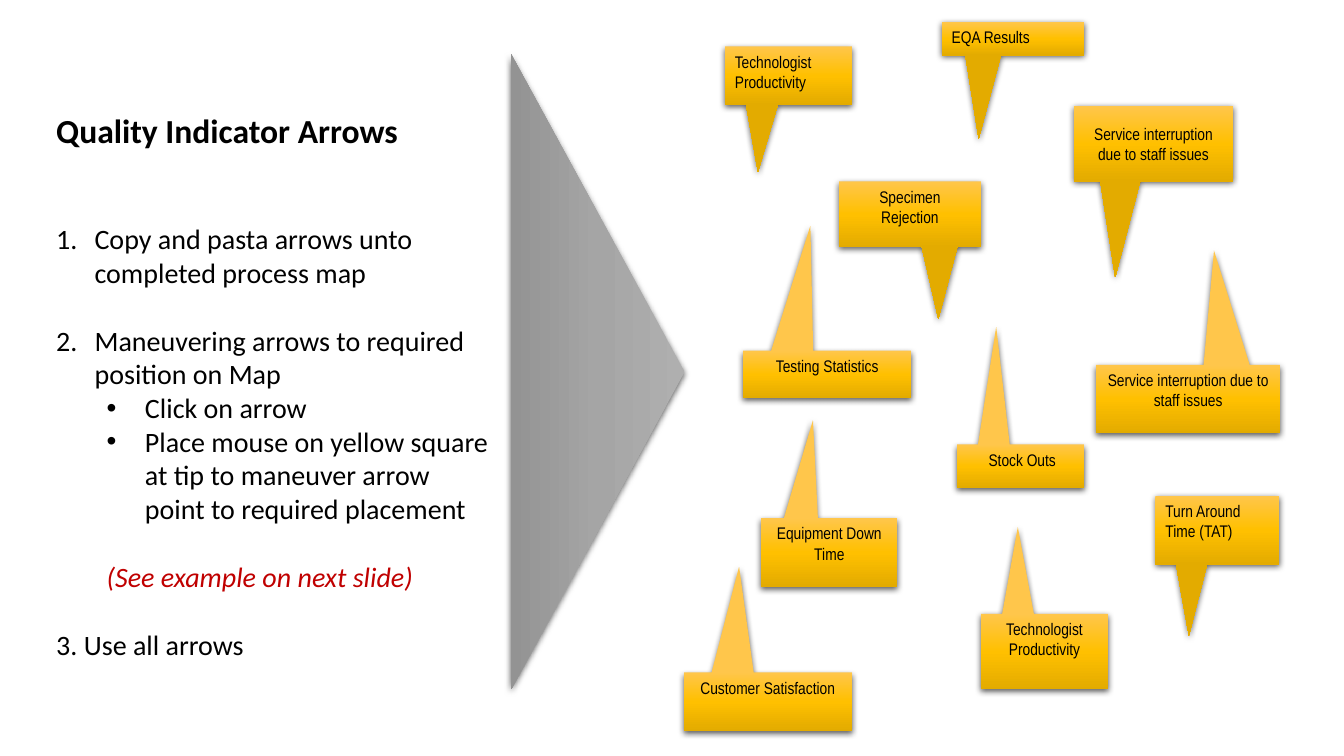
import pptx
import pptx.dml.color
import pptx.enum.shapes
import pptx.enum.text
import pptx.oxml
import pptx.oxml.ns
import pptx.util

SHAPES = pptx.enum.shapes.MSO_SHAPE
ALIGN = pptx.enum.text.PP_ALIGN
ANCHOR = pptx.enum.text.MSO_ANCHOR
NAMESPACE = pptx.oxml.ns.nsdecls("a")
BLACK = "000000"
YELLOWS = ("FFC64B", "FFC000", "E3AB00")
GREYS = ("AFAFAF", "A5A5A5", "939393")


def colour(value):
    return pptx.dml.color.RGBColor.from_string(value)


class IndicatorSlide:
    unit = 0.1
    body_font = "Calibri"
    callout_font = "Arial Narrow"

    def __init__(self, deck):
        self.slide = deck.slides.add_slide(deck.slide_layouts[6])

    def cells(self, *counts):
        return [pptx.util.Inches(count * self.unit) for count in counts]

    def format_runs(self, paragraph, font, size, text_colour, bold=False, italic=False):
        for run in paragraph.runs:
            run.font.name = font
            run.font.size = pptx.util.Pt(size)
            run.font.color.rgb = colour(text_colour)
            run.font.bold = bold
            run.font.italic = italic

    def raised_shape(self, kind, place, shades):
        shape = self.slide.shapes.add_shape(kind, *self.cells(*place))
        shape.line.fill.background()
        shape.shadow.inherit = False
        stops = "".join(
            f'<a:gs pos="{50000 * step}"><a:srgbClr val="{shade}"/></a:gs>'
            for step, shade in enumerate(shades)
        )
        gradient = pptx.oxml.parse_xml(
            f'<a:gradFill {NAMESPACE} rotWithShape="1"><a:gsLst>{stops}</a:gsLst>'
            '<a:lin ang="5400000" scaled="0"/></a:gradFill>'
        )
        shadow = pptx.oxml.parse_xml(
            f'<a:outerShdw {NAMESPACE} blurRad="57150" dist="19050" dir="5400000" '
            'algn="ctr" rotWithShape="0"><a:srgbClr val="000000">'
            '<a:alpha val="63000"/></a:srgbClr></a:outerShdw>'
        )
        properties = shape.element.spPr
        properties.find(pptx.oxml.ns.qn("a:ln")).addprevious(gradient)
        properties.find(pptx.oxml.ns.qn("a:effectLst")).append(shadow)
        return shape

    def callout(self, label, place, tip, align=ALIGN.CENTER, anchor=ANCHOR.TOP):
        box = self.raised_shape(SHAPES.RECTANGULAR_CALLOUT, place, YELLOWS)
        box.adjustments[0], box.adjustments[1] = tip
        frame = box.text_frame
        frame.word_wrap = True
        frame.vertical_anchor = anchor
        frame.text = label
        for paragraph in frame.paragraphs:
            paragraph.alignment = align
            self.format_runs(paragraph, self.callout_font, 12, BLACK)

    def big_arrow(self, place):
        arrow = self.raised_shape(SHAPES.ISOSCELES_TRIANGLE, place, GREYS)
        arrow.rotation = 90

    def text_column(self, place):
        frame = self.slide.shapes.add_textbox(*self.cells(*place)).text_frame
        frame.word_wrap = True
        return frame

    def set_marker(self, paragraph, margin, hanging, marker):
        properties = paragraph._p.get_or_add_pPr()
        properties.set("marL", str(pptx.util.Inches(margin)))
        properties.set("indent", str(pptx.util.Inches(-hanging)))
        bullets = {
            "number": ("buFont", 'typeface="+mj-lt"', "buAutoNum", 'type="arabicPeriod"'),
            "dot": ("buFont", 'typeface="Arial"', "buChar", 'char="•"'),
        }
        if marker in bullets:
            font_tag, face, tag, setting = bullets[marker]
            for name, attribute in ((font_tag, face), (tag, setting)):
                properties.append(pptx.oxml.parse_xml(f"<a:{name} {NAMESPACE} {attribute}/>"))

    def instruction(self, paragraph, text, gap=0, level=0, margin=0, hanging=0,
                    marker=None, size=20, text_colour=BLACK, bold=False, italic=False):
        paragraph.text = text
        paragraph.level = level
        paragraph.space_before = pptx.util.Pt(gap)
        self.set_marker(paragraph, margin, hanging, marker)
        self.format_runs(paragraph, self.body_font, size, text_colour, bold, italic)


CALLOUTS = [
    ("Equipment Down Time", (75.5, 51.4, 13.5, 6.8), (-0.12, -1.93)),
    (" Stock Outs", (94.9, 44.1, 12.6, 4.3), (-0.19, -3.22)),
    ("Technologist Productivity", (97.3, 60.9, 12.6, 7.5), (-0.21, -1.65)),
    ("Service interruption due to staff issues", (106.5, 10.5, 15.8, 7.5),
     (-0.24, 1.77), ALIGN.CENTER, ANCHOR.MIDDLE),
    ("Specimen Rejection", (83.2, 18, 14.1, 6.5), (0.2, 1.6)),
    ("EQA Results", (93.4, 2.2, 14.1, 3.3), (-0.24, 3.01), ALIGN.LEFT),
    ("Technologist\nProductivity", (71.9, 4.6, 12.6, 5.8), (-0.24, 1.65), ALIGN.LEFT),
    ("Turn Around Time (TAT)", (114.6, 49.2, 12.3, 6.8), (-0.23, 1.54), ALIGN.LEFT),
    ("Service interruption due to staff issues", (108.7, 36.2, 18.3, 6.8), (0.14, -2.17)),
    ("Customer Satisfaction", (67.8, 66.7, 16.7, 5.8), (-0.17, -2.31)),
    ("Testing Statistics", (73.7, 34.8, 16.7, 4.7), (-0.1, -3.14)),
]

LINE = 24.4
NUMBERED = dict(margin=0.38, hanging=0.38, marker="number")
DOTTED = dict(level=1, margin=0.88, hanging=0.38, marker="dot")
INSTRUCTIONS = [
    ("Quality Indicator Arrows", dict(size=24, bold=True)),
    ("Copy and pasta arrows unto completed process map", dict(gap=51.3, **NUMBERED)),
    ("Maneuvering arrows to required position on Map", dict(gap=LINE, **NUMBERED)),
    ("Click on arrow", DOTTED),
    ("Place mouse on yellow square at tip to maneuver arrow point to required placement",
     DOTTED),
    ("(See example on next slide)",
     dict(gap=LINE, level=1, margin=0.5, text_colour="C00000", italic=True)),
    ("3. Use all arrows", dict(gap=LINE)),
]


def main():
    deck = pptx.Presentation()
    deck.slide_width = pptx.util.Inches(13.33)
    deck.slide_height = pptx.util.Inches(7.5)
    page = IndicatorSlide(deck)
    for callout in CALLOUTS:
        page.callout(*callout)
    guide = page.text_column((4.6, 10.4, 45.3, 58.9))
    for position, (text, style) in enumerate(INSTRUCTIONS):
        paragraph = guide.add_paragraph() if position else guide.paragraphs[0]
        page.instruction(paragraph, text, **style)
    page.big_arrow((27.8, 28.3, 63, 17.2))
    deck.save("out.pptx")


if __name__ == "__main__":
    main()
